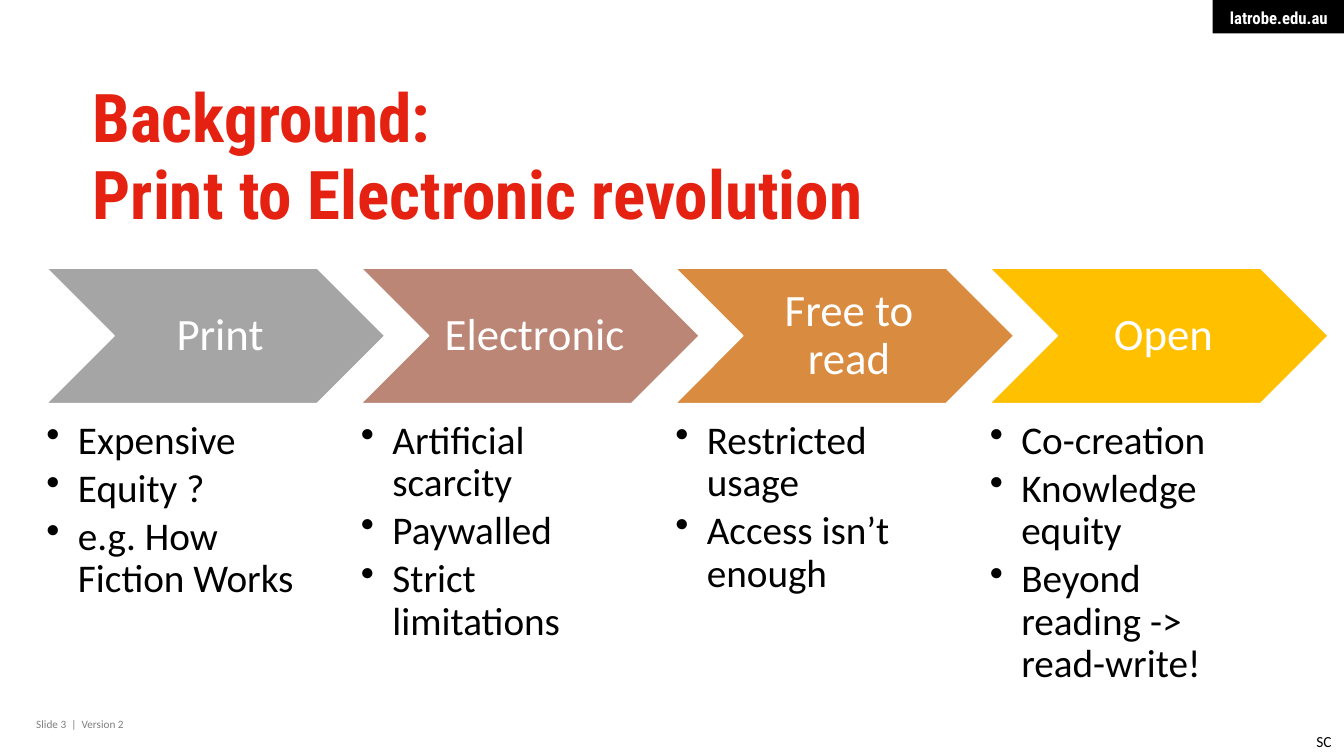
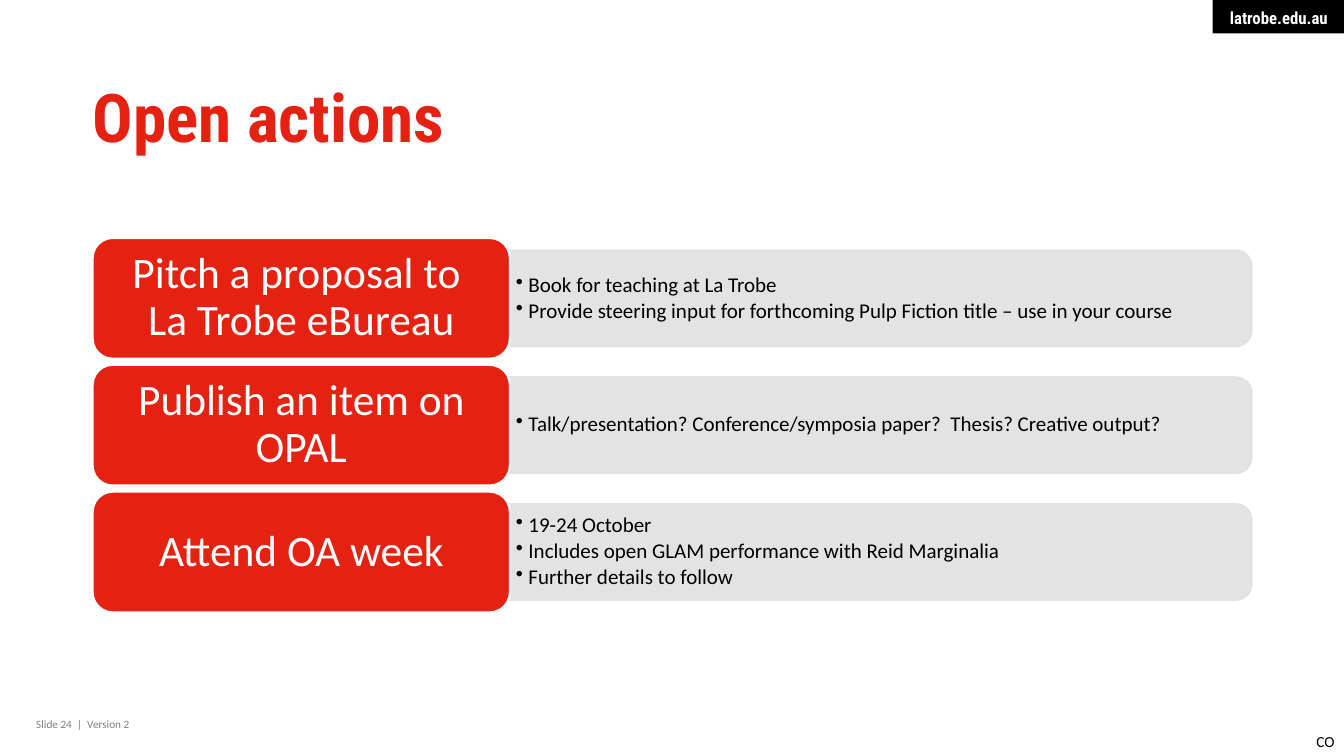
from pptx import Presentation
from pptx.dml.color import RGBColor
from pptx.enum import shapes, text
from pptx.oxml import ns, xmlchemy as xml
from pptx.util import Pt

SHAPE, ALIGN, ANCHOR = shapes.MSO_SHAPE, text.PP_ALIGN, text.MSO_ANCHOR


class Theme:
    red, black, white = "E52212", "000000", "FFFFFF"
    grey, bar = "7F7F7F", "E1E1E1"
    head, body = "Roboto Condensed", "Calibri"
    title, step, point, card, note = 48, 32, 28, 31, 15
    tag, foot, mark = 12, 8, 11


# Content
STEPS = [
    ("Print", "A5A5A5", ["Expensive", "Equity ?", "e.g. How Fiction Works"]),
    ("Electronic", "BB8676",
     ["Artificial scarcity", "Paywalled", "Strict limitations"]),
    ("Free to read", "D98B3F", ["Restricted usage", "Access isn’t enough"]),
    ("Open", "FFC000",
     ["Co-creation", "Knowledge equity", "Beyond reading -> read-write!"]),
]
ACTIONS = [
    ("Pitch a proposal to  La Trobe eBureau",
     ["Book for teaching at La Trobe",
      "Provide steering input for forthcoming Pulp Fiction title"
      " – use in your course"]),
    ("Publish an item on OPAL",
     ["Talk/presentation? Conference/symposia paper?  Thesis?"
      " Creative output?"]),
    ("Attend OA week",
     ["19-24 October",
      "Includes open GLAM performance with Reid Marginalia",
      "Further details to follow"]),
]


# Helpers
def rgb(code):
    return RGBColor.from_string(code)


def bullet(par, dent):
    props = par._p.get_or_add_pPr()
    props.set("marL", str(Pt(dent)))
    props.set("indent", str(-Pt(dent)))
    mark = xml.OxmlElement("a:buChar")
    mark.set("char", "•")
    props.append(mark)


def write(shape, lines, size, color, font=Theme.body, bold=False,
          align=ALIGN.LEFT, anchor=ANCHOR.TOP, pad=(0, 0, 0, 0),
          wrap=True, lead=None, gap=0, dent=0):
    frame = shape.text_frame
    frame.word_wrap = wrap
    frame.vertical_anchor = anchor
    (frame.margin_left, frame.margin_top,
     frame.margin_right, frame.margin_bottom) = map(Pt, pad)
    for i, line in enumerate(lines):
        par = frame.add_paragraph() if i else frame.paragraphs[0]
        par.alignment = align
        if lead:
            par.line_spacing = lead
        par.space_after = Pt(gap)
        if dent:
            bullet(par, dent)
        for j, part in enumerate(line.split("\n")):
            if j:
                par.add_line_break()
            run = par.add_run()
            run.text = part
            face = run.font
            face.name, face.size, face.bold = font, Pt(size), bold
            face.color.rgb = rgb(color)


def label(slide, box, *args, **opts):
    write(slide.shapes.add_textbox(*map(Pt, box)), *args, **opts)


def block(slide, kind, box, fill, line=None, width=1):
    shape = slide.shapes.add_shape(kind, *map(Pt, box))
    shape.shadow.inherit = False
    shape.fill.solid()
    shape.fill.fore_color.rgb = rgb(fill)
    if line:
        shape.line.color.rgb = rgb(line)
        shape.line.width = Pt(width)
    else:
        shape.line.fill.background()
    return shape


def fade(shape, share):
    for color in shape._element.spPr.iter(ns.qn("a:srgbClr")):
        alpha = xml.OxmlElement("a:alpha")
        alpha.set("val", str(share * 1000))
        color.append(alpha)


def page(deck, title, number, mark):
    slide = deck.slides.add_slide(deck.slide_layouts[6])
    tag = block(slide, SHAPE.RECTANGLE, (866.2, 0, 93.8, 23.8), Theme.black)
    write(tag, ["latrobe.edu.au"], Theme.tag, Theme.white, Theme.head, True,
          align=ALIGN.RIGHT, pad=(11.5, 5.8, 11.5, 3.6), wrap=False)
    label(slide, (25.9, 509, 194, 17), [f"Slide {number}  |  Version 2"],
          Theme.foot, Theme.grey, pad=(0, 3.6, 7.2, 3.6))
    label(slide, (66.2, 56.2, 828, 55 * len(title.split("\n"))), [title],
          Theme.title, Theme.red, Theme.head, True, lead=Pt(55))
    label(slide, (933.1, 519.5, 26.9, 20.5), [mark], Theme.mark, Theme.black,
          pad=(7.2, 3.6, 0, 3.6), wrap=False)
    return slide


# Chevron row with bullets below
def steps(deck):
    slide = page(deck, "Background:\nPrint to Electronic revolution", 3, "SC")
    left, top, wide, high, pitch = 33.2, 191.5, 241.8, 96.7, 224.6
    for i, (name, fill, points) in enumerate(STEPS):
        x = left + i * pitch
        arrow = block(slide, SHAPE.CHEVRON, (x, top, wide, high),
                      fill, Theme.white)
        write(arrow, [name], Theme.step, Theme.white, align=ALIGN.CENTER,
              anchor=ANCHOR.MIDDLE, pad=(10, 3.6, 3.6, 3.6), lead=0.9)
        label(slide, (x, 300.2, 193, 195), points, Theme.point, Theme.black,
              lead=0.9, gap=4.2, dent=22.5)


# Cards with a bar of details to the right
def actions(deck):
    slide = page(deck, "Open actions", 24, "CO")
    left, top, wide, high, pitch = 66.2, 170, 298, 86.2, 90.6
    span, thick = 530, 69
    start = left + wide
    for i, (name, notes) in enumerate(ACTIONS):
        y = top + i * pitch
        mid = y + high / 2
        # The bar is drawn upright, then turned about its centre
        bar = block(slide, SHAPE.ROUND_2_SAME_RECTANGLE,
                    (start + (span - thick) / 2, mid - span / 2, thick, span),
                    Theme.bar, Theme.bar)
        bar.rotation = 90
        fade(bar, 90)
        label(slide, (start, mid - 31.3, 526.5, 62.6), notes, Theme.note,
              Theme.black, anchor=ANCHOR.MIDDLE, pad=(4.3, 2.2, 4.3, 2.2),
              lead=0.9, gap=2.25, dent=9)
        card = block(slide, SHAPE.ROUNDED_RECTANGLE, (left, y, wide, high),
                     Theme.red, Theme.white, 1.5)
        write(card, [name], Theme.card, Theme.white, align=ALIGN.CENTER,
              anchor=ANCHOR.MIDDLE, pad=(9.3, 4.6, 9.3, 4.6), lead=0.9)


def main():
    deck = Presentation()
    deck.slide_width, deck.slide_height = Pt(960), Pt(540)
    steps(deck)
    actions(deck)
    deck.save("out.pptx")


if __name__ == "__main__":
    main()
